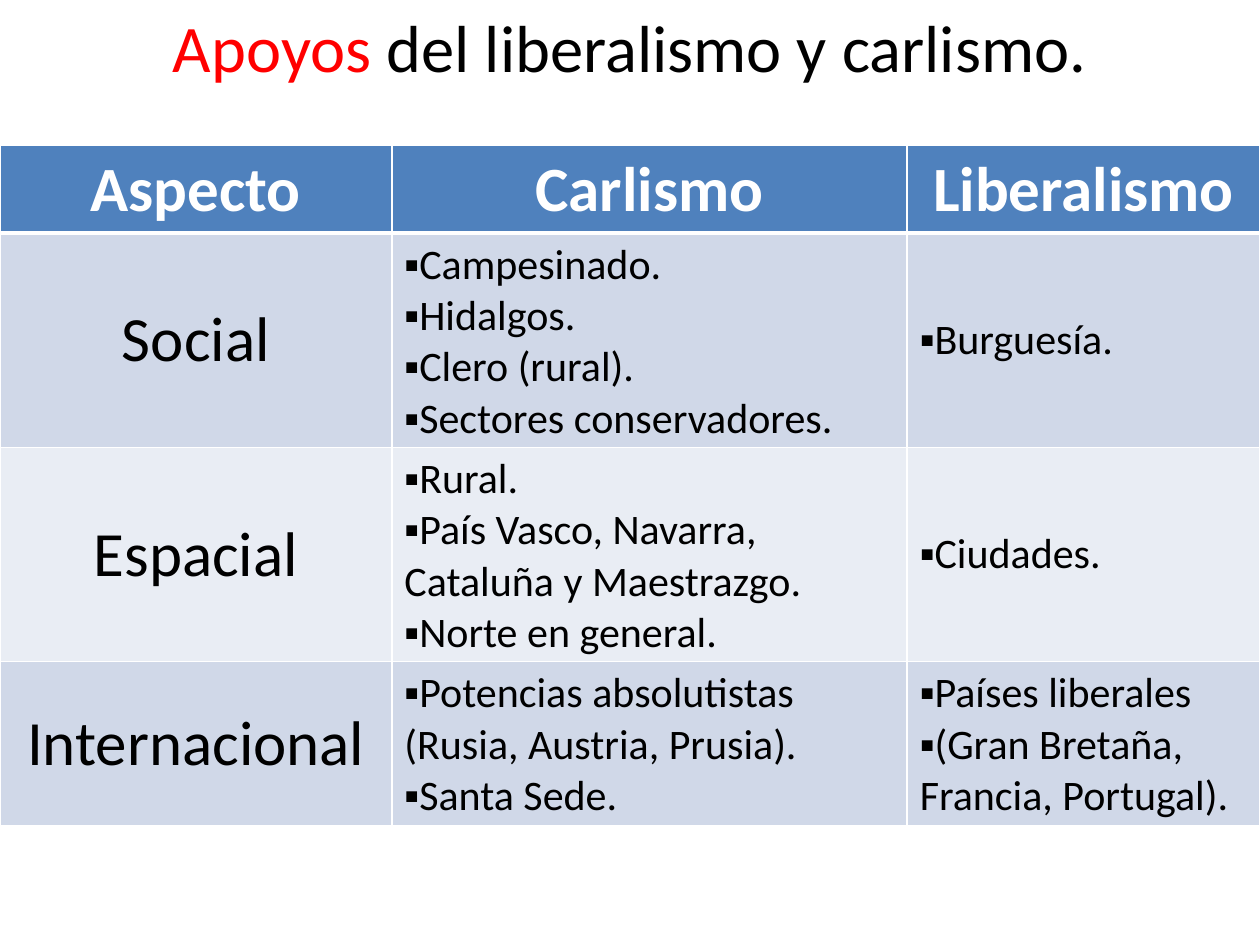
from dataclasses import dataclass

from lxml import etree
from pptx import Presentation
from pptx.dml.color import RGBColor
from pptx.enum.text import MSO_ANCHOR, PP_ALIGN
from pptx.oxml.ns import qn
from pptx.util import Inches, Pt

CENTER, LEFT = PP_ALIGN.CENTER, PP_ALIGN.LEFT
MIDDLE = MSO_ANCHOR.MIDDLE
BULLET = "▪"


@dataclass(frozen=True)
class Theme:
    font: str = "Calibri"
    title_size: int = 38
    heading_size: int = 36
    body_size: int = 24
    text: str = "000000"
    accent: str = "FF0000"
    light: str = "FFFFFF"
    header_fill: str = "4F81BD"
    bands: tuple = ("D0D8E8", "E9EDF4")
    rule: int = 1
    header_rule: int = 3


HEADINGS = ["Aspecto", "Carlismo", "Liberalismo"]
SUPPORTERS = [
    ("Social",
     ["Campesinado.", "Hidalgos.", "Clero (rural).", "Sectores conservadores."],
     ["Burguesía."]),
    ("Espacial",
     ["Rural.", "País Vasco, Navarra, Cataluña y Maestrazgo.", "Norte en general."],
     ["Ciudades."]),
    ("Internacional",
     ["Potencias absolutistas (Rusia, Austria, Prusia).", "Santa Sede."],
     ["Países liberales", "(Gran Bretaña, Francia, Portugal)."]),
]
COLUMN_WIDTHS = [3.11, 4.09, 2.8]
ROW_HEIGHTS = [0.7, 1.7, 1.7, 1.3]


def add_text(paragraph, text, *, font, size, color, bold=False, align=LEFT, bullet=None):
    paragraph.alignment = align
    run = paragraph.add_run()
    run.text = text
    run.font.name = font
    run.font.size = Pt(size)
    run.font.bold = bold
    run.font.color.rgb = RGBColor.from_string(color)
    if bullet:
        properties = paragraph._p.get_or_add_pPr()
        properties.set("marL", "0")
        properties.set("indent", "0")
        etree.SubElement(properties, qn("a:buFont"), typeface=font)
        etree.SubElement(properties, qn("a:buChar"), char=bullet)


class SlideBuilder:
    def __init__(self, slide, theme):
        self.slide = slide
        self.theme = theme

    def title(self, parts, left, top, width, height):
        box = self.slide.shapes.add_textbox(
            Inches(left), Inches(top), Inches(width), Inches(height))
        box.text_frame.word_wrap = True
        for text, color in parts:
            add_text(box.text_frame.paragraphs[0], text, font=self.theme.font,
                     size=self.theme.title_size, color=color, align=CENTER)

    def borders(self, cell, top, bottom):
        properties = cell._tc.get_or_add_tcPr()
        rule = self.theme.rule
        for side, width in (("L", rule), ("R", rule), ("T", top), ("B", bottom)):
            line = etree.SubElement(properties, qn(f"a:ln{side}"), w=str(Pt(width)))
            fill = etree.SubElement(line, qn("a:solidFill"))
            etree.SubElement(fill, qn("a:srgbClr"), val=self.theme.light)

    def cell(self, cell, lines, fill, top, bottom, **text_format):
        self.borders(cell, top, bottom)
        cell.fill.solid()
        cell.fill.fore_color.rgb = RGBColor.from_string(fill)
        cell.vertical_anchor = MIDDLE
        frame = cell.text_frame
        for index, line in enumerate(lines):
            paragraph = frame.add_paragraph() if index else frame.paragraphs[0]
            add_text(paragraph, line, font=self.theme.font, **text_format)

    def table(self, headings, rows, widths, heights, left, top):
        theme = self.theme
        table = self.slide.shapes.add_table(
            len(heights), len(widths), Inches(left), Inches(top),
            Inches(sum(widths)), Inches(sum(heights))).table
        for column, width in zip(table.columns, widths):
            column.width = Inches(width)
        for row, height in zip(table.rows, heights):
            row.height = Inches(height)
        for column, heading in enumerate(headings):
            self.cell(table.cell(0, column), [heading], theme.header_fill,
                      theme.rule, theme.header_rule, size=theme.heading_size,
                      color=theme.light, bold=True, align=CENTER)
        for number, (aspect, *groups) in enumerate(rows, start=1):
            band = theme.bands[(number - 1) % len(theme.bands)]
            top_rule = theme.header_rule if number == 1 else theme.rule
            self.cell(table.cell(number, 0), [aspect], band, top_rule, theme.rule,
                      size=theme.heading_size, color=theme.text, align=CENTER)
            for column, group in enumerate(groups, start=1):
                self.cell(table.cell(number, column), group, band, top_rule, theme.rule,
                          size=theme.body_size, color=theme.text, bullet=BULLET)


def main():
    presentation = Presentation()
    presentation.slide_width = Inches(10)
    presentation.slide_height = Inches(7.5)
    theme = Theme()
    builder = SlideBuilder(
        presentation.slides.add_slide(presentation.slide_layouts[6]), theme)
    builder.title([("Apoyos ", theme.accent),
                   ("del liberalismo y carlismo.", theme.text)], 0, 0, 10, 0.74)
    builder.table(HEADINGS, SUPPORTERS, COLUMN_WIDTHS, ROW_HEIGHTS, 0, 1.15)
    presentation.save("out.pptx")


if __name__ == "__main__":
    main()
